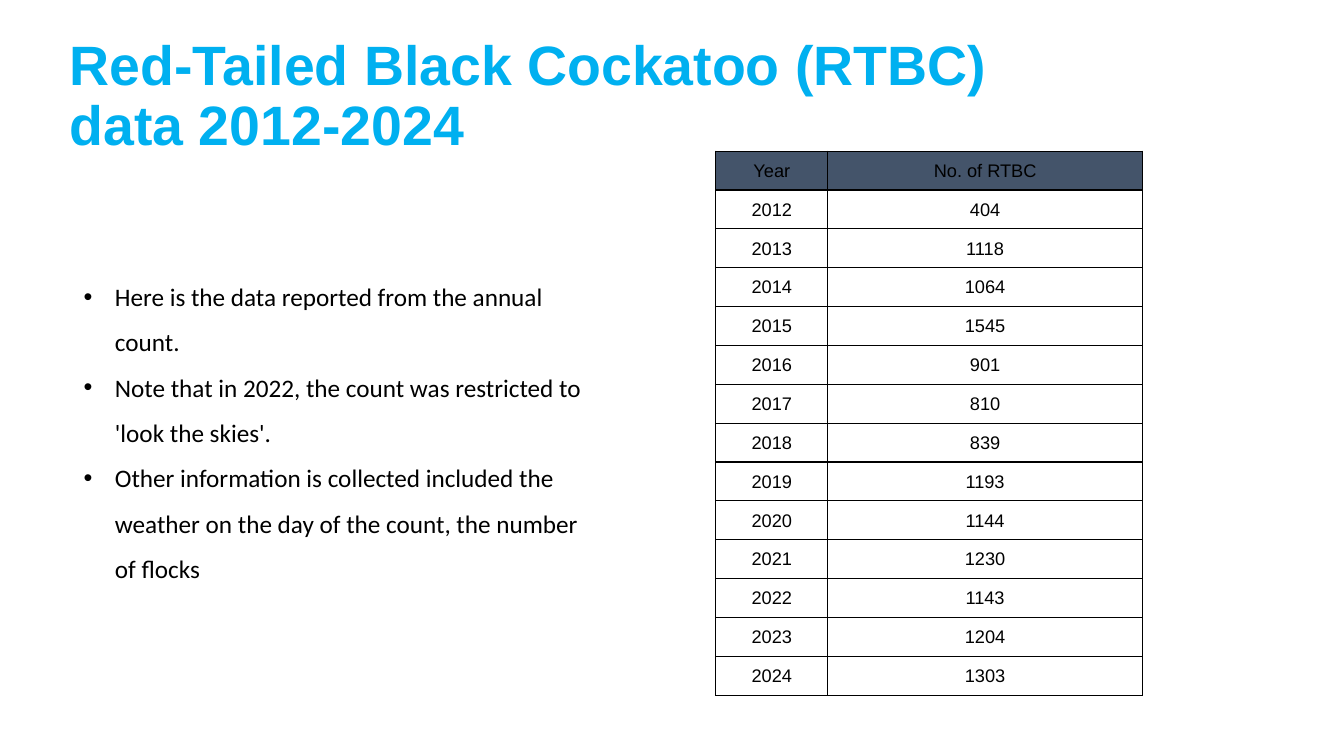
import pptx
import pptx.util
import pptx.dml.color
import pptx.enum.text
import pptx.oxml
import pptx.oxml.ns
from pptx.util import Inches

COUNTS = [404, 1118, 1064, 1545, 901, 810, 839, 1193, 1144, 1230, 1143, 1204, 1303]
ROWS = [("Year", "No. of RTBC")] + list(enumerate(COUNTS, 2012))
NOTES = [
    "Here is the data reported from the annual count.",
    "Note that in 2022, the count was restricted to 'look the skies'.",
    "Other information is collected included the weather on the day of the count, "
    "the number of flocks",
]
ALIGN = pptx.enum.text.PP_ALIGN
ANCHOR = pptx.enum.text.MSO_ANCHOR


def color(code):
    return pptx.dml.color.RGBColor.from_string(code)


def style(para, name, size, code, bold=False):
    font = para.font
    font.name, font.size, font.bold = name, pptx.util.Pt(size), bold
    font.color.rgb = color(code)


def place(shape, left, top, width, height):
    shape.left, shape.top = Inches(left), Inches(top)
    shape.width, shape.height = Inches(width), Inches(height)
    shape.text_frame.auto_size = pptx.enum.text.MSO_AUTO_SIZE.NONE


def add_title(slide, text):
    title = slide.shapes.title
    place(title, 0.59, 0.4, 11.83, 1.14)
    title.text_frame.text = text
    title.text_frame.vertical_anchor = ANCHOR.MIDDLE
    para = title.text_frame.paragraphs[0]
    para.alignment = ALIGN.LEFT
    para.line_spacing = 0.9
    style(para, "Arial", 39.6, "00B0F0", True)


def add_list(slide, items):
    body = slide.placeholders[1]
    place(body, 0.41, 2.59, 5.59, 3.23)
    body.text_frame.text = "\n".join(items)
    for para in body.text_frame.paragraphs:
        para.line_spacing = 1.5
        para.space_before = pptx.util.Pt(0)
        props = para._p.get_or_add_pPr()
        props.set("marL", str(Inches(0.63)))
        props.set("indent", str(Inches(-0.31)))
        mark = pptx.oxml.parse_xml(
            f'<a:buChar {pptx.oxml.ns.nsdecls("a")} char="•"/>')
        props.append(mark)
        style(para, "Calibri", 18, "000000")


def add_border(cell, code):
    props = cell._tc.get_or_add_tcPr()
    for side in "LRTB":
        props.append(pptx.oxml.parse_xml(
            f'<a:ln{side} {pptx.oxml.ns.nsdecls("a")} w="12700"><a:solidFill>'
            f'<a:srgbClr val="{code}"/></a:solidFill></a:ln{side}>'))


def fill_cell(cell, text, head):
    cell.text = str(text)
    cell.vertical_anchor = ANCHOR.MIDDLE
    cell.margin_left = cell.margin_right = cell.margin_top = Inches(0.01)
    cell.margin_bottom = 0
    add_border(cell, "000000")
    if head:
        cell.fill.solid()
        cell.fill.fore_color.rgb = color("44546A")
    else:
        cell.fill.background()
    para = cell.text_frame.paragraphs[0]
    para.alignment = ALIGN.CENTER
    style(para, "Arial", 13, "000000")


def add_table(slide, rows):
    frame = slide.shapes.add_table(
        len(rows), 2, Inches(7.1), Inches(1.5), Inches(4.23), Inches(5.4))
    table = frame.table
    table.horz_banding = False
    for col, width in zip(table.columns, (1.11, 3.12)):
        col.width = Inches(width)
    for r, row in enumerate(rows):
        for c, text in enumerate(row):
            fill_cell(table.cell(r, c), text, r == 0)


def main():
    deck = pptx.Presentation()
    deck.slide_width, deck.slide_height = Inches(13.33), Inches(7.5)
    slide = deck.slides.add_slide(deck.slide_layouts[1])

    # Heading and notes on the left
    add_title(slide, "Red-Tailed Black Cockatoo (RTBC) \vdata 2012-2024")
    add_list(slide, NOTES)

    # Yearly counts on the right
    add_table(slide, ROWS)
    deck.save("out.pptx")


if __name__ == "__main__":
    main()
